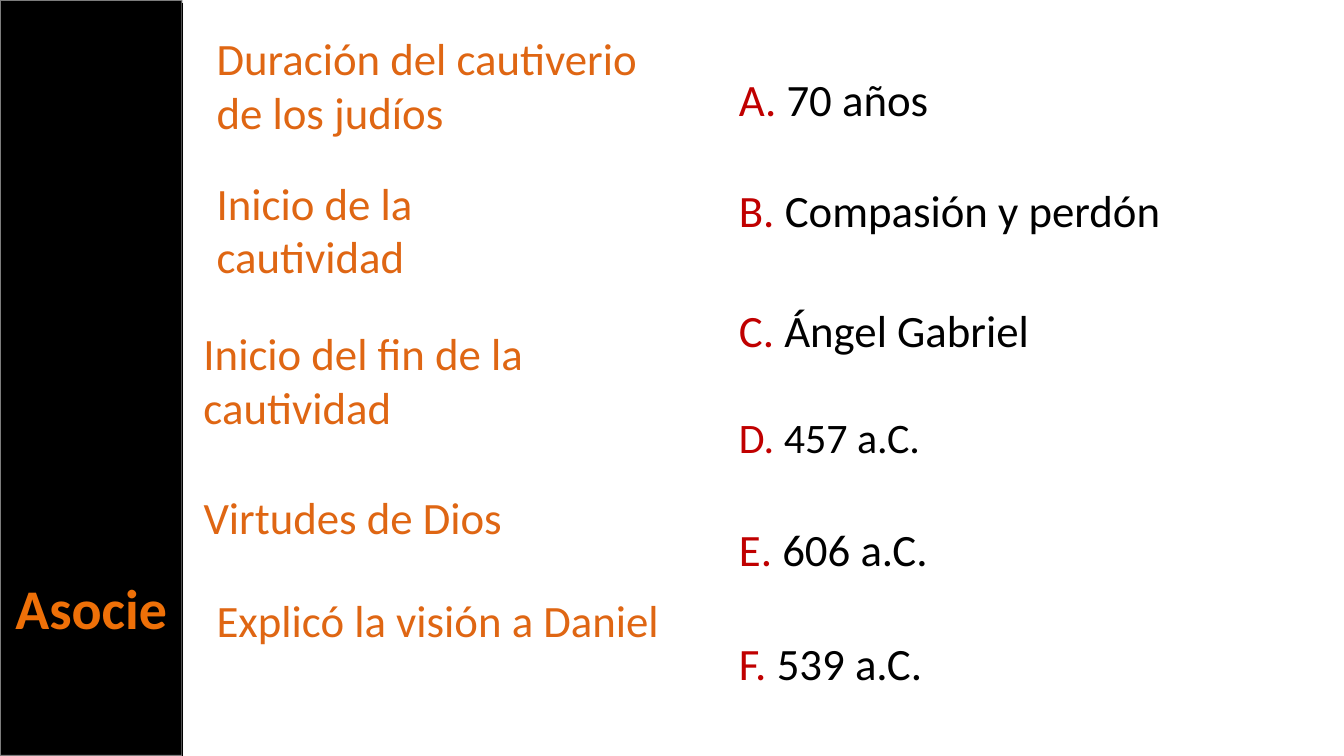
from pptx import Presentation
from pptx.dml.color import RGBColor
from pptx.enum import shapes, text
from pptx.oxml.ns import qn
from pptx.util import Inches, Pt
from lxml import etree

# Content
TITLE = "Asocie"
CLUES = [  # text, left, top, width, height
    ("Duración del cautiverio de los judíos", 2.05, 0.26, 4.59, 1.18),
    ("Inicio de la cautividad", 2.05, 1.69, 3.84, 1.18),
    ("Inicio del fin de la cautividad", 1.92, 3.18, 4.13, 1.18),
    ("Virtudes de Dios", 1.92, 4.81, 4.39, 0.64),
    ("Explicó la visión a Daniel", 2.05, 5.83, 4.59, 1.18),
]
ANSWERS = [  # letter, text, top, size
    ("A. ", "70 años", 0.66, 32),
    ("B. ", "Compasión y perdón", 1.76, 32),
    ("C. ", "Ángel Gabriel", 2.95, 32),
    ("D. ", "457 a.C.", 4.03, 30),
    ("E. ", "606 a.C.", 5.13, 32),
    ("F. ", "539 a.C.", 6.26, 32),
]


class Theme:
    font = "Calibri"
    black = RGBColor.from_string("000000")
    edge = RGBColor.from_string("F9F9F9")
    clue = RGBColor.from_string("DF6613")
    letter = RGBColor.from_string("C00000")
    title = RGBColor.from_string("EE7008")
    body, head = 32, 40


WIDE, HIGH, BAR = 13.33, 7.5, 1.81
ANSWER_LEFT, ANSWER_WIDTH = 7.23, 5.59

deck = Presentation()
deck.slide_width, deck.slide_height = Inches(WIDE), Inches(HIGH)
slide = deck.slides.add_slide(deck.slide_layouts[5])
parts = slide.shapes


def style(run, size, color, bold=False):
    font = run.font
    font.name, font.size, font.bold = Theme.font, Pt(size), bold
    font.color.rgb = color


def add_text(left, top, width, height, pieces, size):
    box = parts.add_textbox(*map(Inches, (left, top, width, height)))
    frame = box.text_frame
    frame.word_wrap = True
    for words, color in pieces:
        run = frame.paragraphs[0].add_run()
        run.text = words
        style(run, size, color)


# Side bar
bar = parts.add_shape(shapes.MSO_SHAPE.RECTANGLE, 0, 0, Inches(BAR), Inches(HIGH))
bar.shadow.inherit = False
bar.fill.solid()
bar.fill.fore_color.rgb = Theme.black
bar.line.color.rgb = Theme.edge
bar.line.width = Pt(1.35)
tint = bar.line._ln.find(".//" + qn("a:srgbClr"))
etree.SubElement(tint, qn("a:alpha")).set("val", "50000")

# Clues and answers
for words, left, top, width, height in CLUES:
    add_text(left, top, width, height, [(words, Theme.clue)], Theme.body)
for letter, words, top, size in ANSWERS:
    pieces = [(letter, Theme.letter), (words, Theme.black)]
    add_text(ANSWER_LEFT, top, ANSWER_WIDTH, size / 50, pieces, size)

# Title, raised above the bar
title = parts.title
title.left, title.top = 0, Inches(5.64)
title.width, title.height = Inches(BAR), Inches(0.77)
frame = title.text_frame
frame.text = TITLE
frame.word_wrap = True
frame.auto_size = text.MSO_AUTO_SIZE.NONE
frame.vertical_anchor = text.MSO_ANCHOR.TOP
frame.paragraphs[0].alignment = text.PP_ALIGN.CENTER
style(frame.paragraphs[0].runs[0], Theme.head, Theme.title, True)
bar._element.addnext(title._element)

# Bar edge
edge = parts.add_connector(shapes.MSO_CONNECTOR.STRAIGHT,
                           Inches(BAR), Inches(0.03), Inches(BAR), Inches(HIGH))
edge.line.color.rgb = Theme.black
edge.line.width = Pt(0.85)
etree.SubElement(edge._element.spPr, qn("a:effectLst"))

deck.save("out.pptx")
